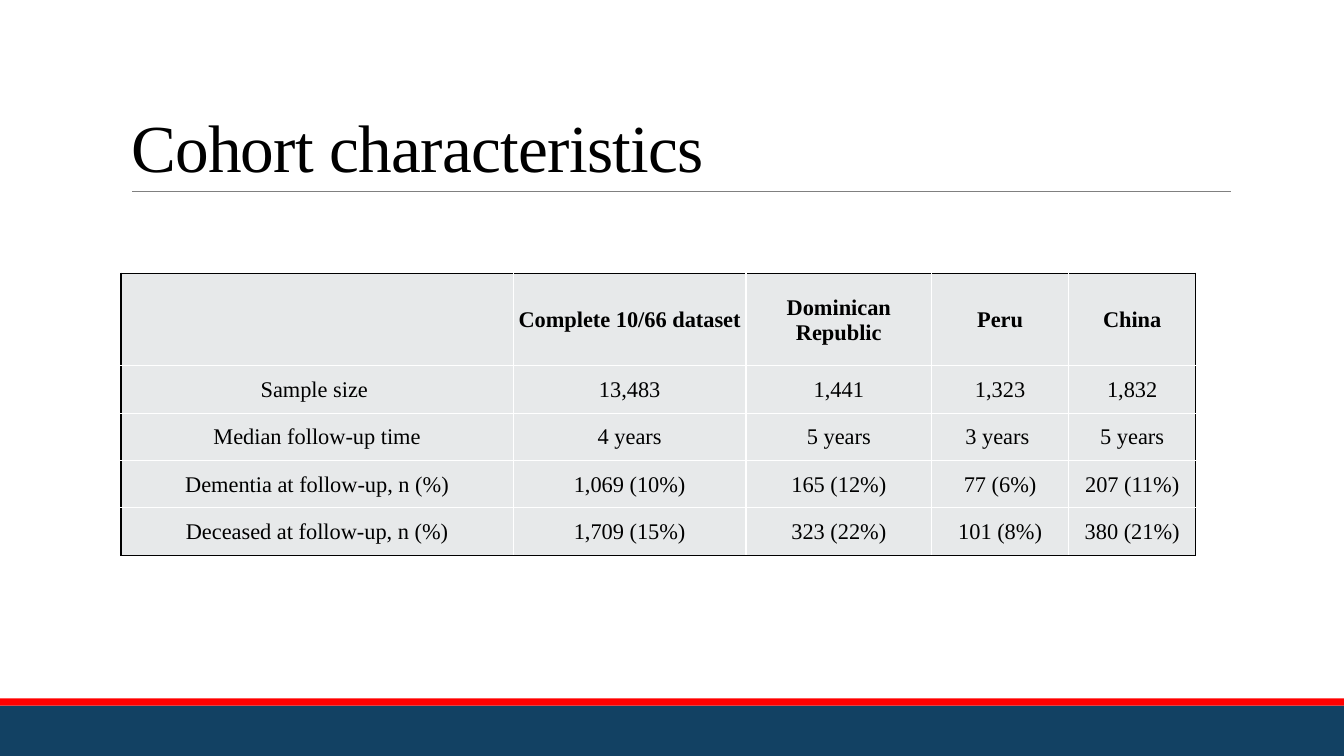
from lxml.etree import SubElement
from pptx import Presentation
from pptx.dml.color import RGBColor
from pptx.enum.shapes import MSO_CONNECTOR, MSO_SHAPE
from pptx.enum.text import MSO_ANCHOR, MSO_AUTO_SIZE, PP_ALIGN
from pptx.oxml.ns import qn
from pptx.util import Inches, Pt

FONT = "Times New Roman"
BLACK, WHITE, GREY = "000000", "FFFFFF", "E7E9EA"
COLUMN_WIDTHS = [3.89, 2.31, 1.84, 1.36, 1.26]
ROW_HEIGHTS = [0.92, 0.47, 0.47, 0.47, 0.47]
COHORTS = [
    ["", "Complete 10/66 dataset", "Dominican Republic", "Peru", "China"],
    ["Sample size ", "13,483", "1,441", "1,323", "1,832"],
    ["Median follow-up time", "4 years", "5 years", "3 years ", "5 years"],
    ["Dementia at follow-up, n (%)", "1,069 (10%)", "165 (12%)", "77 (6%)", "207 (11%)"],
    ["Deceased at follow-up, n (%)", "1,709 (15%)", "323 (22%)", "101 (8%)", "380 (21%)"],
]


def colour(value):
    return RGBColor.from_string(value)


def apply(target, values):
    for name, value in values.items():
        setattr(target, name, value)


def write(para, text, size, bold=False):
    span = para.add_run()
    span.text = text
    apply(span.font, {"name": FONT, "size": Pt(size), "bold": bold})
    span.font.color.rgb = colour(BLACK)
    return span


def add_band(page, top, height, fill):
    band = page.shapes.add_shape(
        MSO_SHAPE.RECTANGLE, 0, Inches(top), Inches(13.33), Inches(height))
    band.shadow.inherit = False
    band.fill.solid()
    band.fill.fore_color.rgb = colour(fill)
    band.line.fill.background()


def add_rule(page, left, right, top):
    rule = page.shapes.add_connector(
        MSO_CONNECTOR.STRAIGHT, Inches(left), Inches(top), Inches(right), Inches(top))
    rule.line.color.rgb = colour("808080")
    rule.line.width = Pt(0.5)
    SubElement(rule._element.spPr, qn("a:effectLst"))


def set_title(page, text):
    title = page.shapes.title
    apply(title, {"left": Inches(1.2), "top": Inches(0.31),
                  "width": Inches(11), "height": Inches(1.59)})
    apply(title.text_frame, {"vertical_anchor": MSO_ANCHOR.BOTTOM, "word_wrap": True,
                             "auto_size": MSO_AUTO_SIZE.NONE})
    para = title.text_frame.paragraphs[0]
    apply(para, {"alignment": PP_ALIGN.LEFT, "line_spacing": 0.85})
    span = write(para, text, 48)
    span._r.get_or_add_rPr().set("spc", "-50")


def set_borders(cell, outer_sides):
    properties = cell._tc.get_or_add_tcPr()
    for side in "LRTB":
        border = SubElement(properties, qn(f"a:ln{side}"), w=str(Pt(1)))
        fill = SubElement(border, qn("a:solidFill"))
        SubElement(fill, qn("a:srgbClr"), val=BLACK if side in outer_sides else WHITE)


def format_cell(cell, text, bold, outer_sides):
    apply(cell, {"margin_left": Inches(0.01), "margin_right": Inches(0.01),
                 "margin_top": Inches(0.01), "margin_bottom": 0,
                 "vertical_anchor": MSO_ANCHOR.MIDDLE})
    set_borders(cell, outer_sides)
    cell.fill.solid()
    cell.fill.fore_color.rgb = colour(GREY)
    para = cell.text_frame.paragraphs[0]
    para.alignment = PP_ALIGN.CENTER
    if text:
        write(para, text, 16, bold)


def add_cohort_table(page):
    last_row, last_column = len(ROW_HEIGHTS) - 1, len(COLUMN_WIDTHS) - 1
    table = page.shapes.add_table(
        len(ROW_HEIGHTS), len(COLUMN_WIDTHS), Inches(1.2), Inches(2.71),
        Inches(sum(COLUMN_WIDTHS)), Inches(sum(ROW_HEIGHTS))).table
    for column, width in zip(table.columns, COLUMN_WIDTHS):
        column.width = Inches(width)
    for row, height in zip(table.rows, ROW_HEIGHTS):
        row.height = Inches(height)
    for row, texts in enumerate(COHORTS):
        for column, text in enumerate(texts):
            edges = {"L": column == 0, "R": column == last_column,
                     "T": row == 0, "B": row == last_row}
            outer_sides = [side for side, is_outer in edges.items() if is_outer]
            format_cell(table.cell(row, column), text, row == 0, outer_sides)


def main():
    deck = Presentation()
    apply(deck, {"slide_width": Inches(13.33), "slide_height": Inches(7.5)})
    page = deck.slides.add_slide(deck.slide_layouts.get_by_name("Title Only"))
    add_band(page, 7, 0.5, "124163")
    add_band(page, 6.93, 0.07, "FF0000")
    add_rule(page, 1.31, 12.21, 1.9)
    set_title(page, "Cohort characteristics")
    add_cohort_table(page)
    deck.save("out.pptx")


if __name__ == "__main__":
    main()
